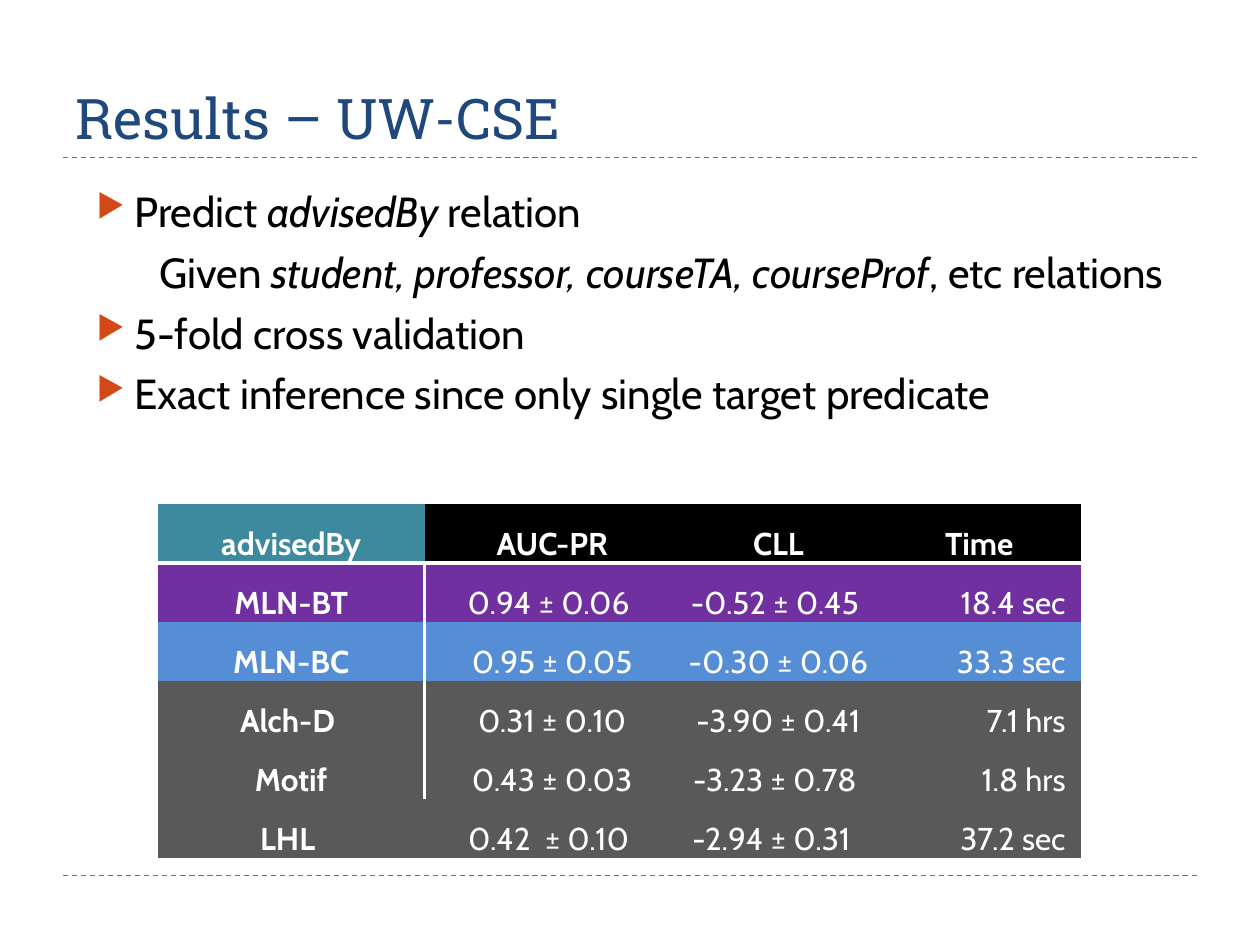
"""Build the UW-CSE results slide: title, key points and a score table."""
from lxml import etree
from pptx import Presentation
from pptx.dml.color import RGBColor
from pptx.enum import dml, shapes, text
from pptx.oxml import ns
from pptx.util import Cm, Pt

COLOURS = {
    "title": "1F497D", "rule": "C0504D", "body": "000000", "marker": "D34817",
    "corner": "3D8A9E", "header": "000000", "boosted_tree": "7030A0",
    "boosted_clause": "558ED5", "baseline": "595959", "light": "FFFFFF",
}


def add_text(paragraph, wording, colour, **font_format):
    run = paragraph.add_run()
    run.text = wording
    run.font.color.rgb = RGBColor.from_string(COLOURS[colour])
    for name, value in font_format.items():
        setattr(run.font, name, value)


def add_xml(parent, tag, index=None, **attributes):
    element = etree.Element(ns.qn(tag), attributes)
    parent.insert(len(parent) if index is None else index, element)
    return element


deck = Presentation()
deck.slide_width, deck.slide_height = Cm(25.4), Cm(19.05)
slide = deck.slides.add_slide(deck.slide_layouts[6])

for height in (17.65, 3.18):
    rule = slide.shapes.add_connector(
        shapes.MSO_CONNECTOR.STRAIGHT, Cm(1.27), Cm(height), Cm(24.13), Cm(height))
    rule.line.color.rgb = RGBColor.from_string(COLOURS["rule"])
    rule.line.width = Pt(0.75)
    rule.line.dash_style = dml.MSO_LINE.DASH
    add_xml(rule._element.spPr, "a:effectLst")

title = slide.shapes.add_textbox(Cm(1.27), Cm(0.43), Cm(22.86), Cm(2.74)).text_frame
title.word_wrap = True
title.vertical_anchor = text.MSO_ANCHOR.BOTTOM
add_text(title.paragraphs[0], "Results – UW-CSE", "title", name="Roboto Slab", size=Pt(32))

points = [
    (0, [("Predict ", False), ("advisedBy", True), (" relation", False)]),
    (1, [("Given ", False), ("student, professor, courseTA, courseProf", True),
         (", etc relations", False)]),
    (0, [("5-fold cross validation", False)]),
    (0, [("Exact inference since only single target predicate", False)]),
]
body = slide.shapes.add_textbox(Cm(1.7), Cm(3.61), Cm(22.43), Cm(5)).text_frame
body.word_wrap = True
for number, (level, pieces) in enumerate(points):
    point = body.add_paragraph() if number else body.paragraphs[0]
    point.level = level
    point.space_before = Pt(6)
    settings = point._p.get_or_add_pPr()
    settings.set("marL", str(Cm(2.03 if level else 0.76)))
    settings.set("indent", str(Cm(-0.76)))
    if level == 0:
        marker_colour = add_xml(settings, "a:buClr")
        add_xml(marker_colour, "a:srgbClr", val=COLOURS["marker"])
        add_xml(settings, "a:buSzPct", val="76000")
        add_xml(settings, "a:buChar", char="▶")
    for wording, italic in pieces:
        add_text(point, wording, "body", name="Cabin", size=Pt(24), italic=italic)

results = [
    ("header", ["advisedBy", " AUC-PR", " CLL", " Time "]),
    ("boosted_tree", ["MLN-BT", " 0.94 ± 0.06 ", " -0.52 ± 0.45 ", "18.4 sec"]),
    ("boosted_clause", ["MLN-BC", " 0.95 ± 0.05", " -0.30 ± 0.06", "33.3 sec"]),
    ("baseline", ["Alch-D ", " 0.31 ± 0.10", " -3.90 ± 0.41", "7.1 hrs"]),
    ("baseline", ["Motif", " 0.43 ± 0.03", " -3.23 ± 0.78 ", "1.8 hrs"]),
    ("baseline", ["LHL ", " 0.42  ± 0.10 ", "-2.94 ± 0.31 ", "37.2 sec"]),
]
cell_format = {
    "vertical_anchor": text.MSO_ANCHOR.BOTTOM, "margin_left": Cm(0.03),
    "margin_right": Cm(0.03), "margin_top": Cm(0.03), "margin_bottom": 0,
}
scores_frame = slide.shapes.add_table(
    len(results), 4, Cm(3.18), Cm(10.16), Cm(18.62), Cm(7.14))
scores = scores_frame.table
scores._tbl.tblPr.find(ns.qn("a:tableStyleId")).text = "{2D5ABB26-0587-4C30-8999-92F81FD0307C}"
for column, width in zip(scores.columns, (5.38, 5, 4.12, 4.12)):
    column.width = Cm(width)
for row, (shade, entries) in enumerate(results):
    scores.rows[row].height = Cm(1.19)
    for col, entry in enumerate(entries):
        cell = scores.cell(row, col)
        for name, value in cell_format.items():
            setattr(cell, name, value)
        fill_name = "corner" if row == col == 0 else shade
        cell.fill.solid()
        cell.fill.fore_color.rgb = RGBColor.from_string(COLOURS[fill_name])
        is_time = row > 0 and col == 3
        if is_time:
            cell.margin_right = Cm(0.32)
        paragraph = cell.text_frame.paragraphs[0]
        paragraph.alignment = text.PP_ALIGN.RIGHT if is_time else text.PP_ALIGN.CENTER
        add_text(paragraph, entry, "light", name="Cabin", size=Pt(18),
                 bold=row == 0 or col == 0)
        borders = {"a:lnB": row == 0, "a:lnR": col == 0 and 0 < row < 5}
        for side, shown in borders.items():
            if shown:
                border = add_xml(cell._tc.tcPr, side, 0, w=str(Pt(2)))
                add_xml(add_xml(border, "a:solidFill"), "a:srgbClr", val=COLOURS["light"])

deck.save("out.pptx")
